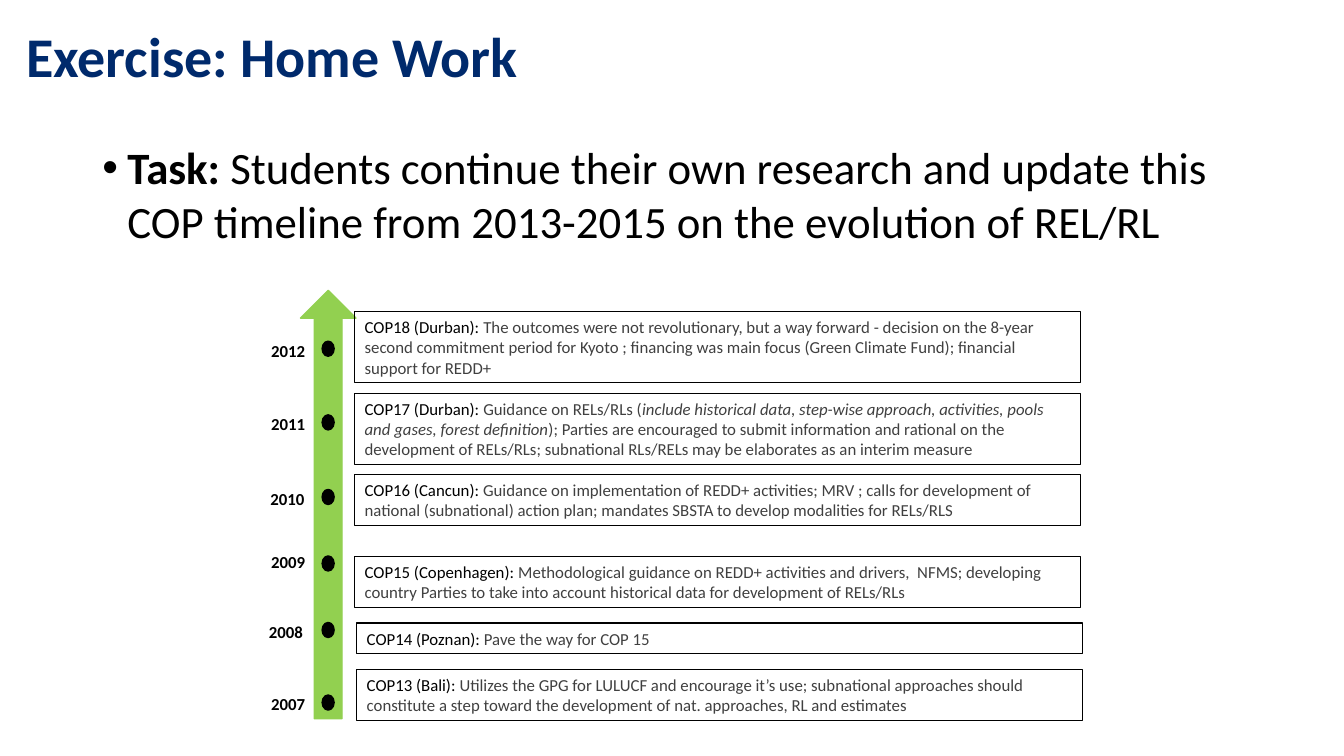
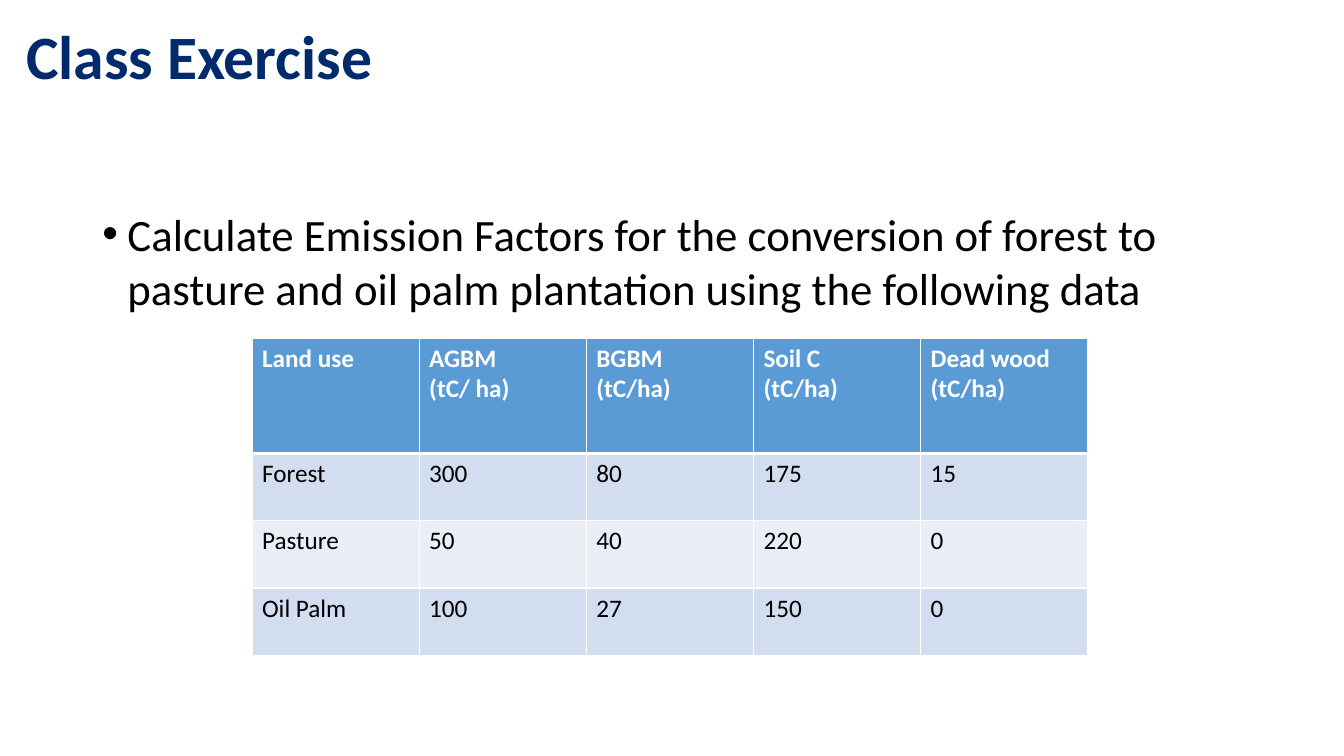
from pptx import Presentation
from pptx.dml.color import RGBColor
from pptx.enum.shapes import MSO_SHAPE as SHAPE
from pptx.enum.text import MSO_ANCHOR as ANCHOR, PP_ALIGN as ALIGN
from pptx.oxml import parse_xml
from pptx.oxml.ns import nsdecls
from pptx.util import Pt

FONT = "Calibri"
C = {"navy": "002A6C", "black": "000000", "grey": "404040", "white": "FFFFFF",
     "green": "92D050", "blue": "5B9BD5", "band": "D2DEEF", "light": "EAEFF7"}

TASK = [("Task:", {"bold": True}),
        (" Students continue their own research and update this COP timeline "
         "from 2013-2015 on the evolution of REL/RL", {})]
CALCULATE = [("Calculate Emission Factors for the conversion of forest to pasture "
              "and oil palm plantation using the following data", {})]

GREY = {"color": "grey"}
ITALIC = {"color": "grey", "italic": True}
# year, year left, year top, dot centre, box left, box top, box height, heading, body
EVENTS = [
    ("2012", 186.5, 239.8, 249.1, 253.4, 222.5, 51, "COP18 (Durban): ", [
        ("The outcomes were not revolutionary, but a way forward - decision on the "
         "8-year second commitment period for Kyoto ; financing was main focus "
         "(Green Climate Fund); financial support for REDD+", GREY)]),
    ("2011", 186.5, 292.3, 301.7, 253.4, 280.8, 51, "COP17 (Durban): ", [
        ("Guidance on RELs/RLs (", GREY),
        ("include historical data, step-wise approach, activities, pools and gases, "
         "forest definition", ITALIC),
        ("); Parties are encouraged to submit information and rational on the "
         "development of RELs/RLs; subnational RLs/RELs may be elaborates as an "
         "interim measure", GREY)]),
    ("2010", 186, 345.6, 355, 253.4, 339.1, 36.3, "COP16 (Cancun): ", [
        ("Guidance on implementation of REDD+ activities; MRV ; calls for development "
         "of national (subnational) action plan; mandates SBSTA to develop modalities "
         "for RELs/RLS", GREY)]),
    ("2009", 186.5, 390.2, 402.5, 253.4, 397.4, 36.3, "COP15 (Copenhagen): ", [
        ("Methodological guidance on REDD+ activities and drivers,  NFMS; developing "
         "country Parties to take into account historical data for development of "
         "RELs/RLs", GREY)]),
    ("2008", 185, 440.6, 450, 254.9, 445, 21.8, "COP14 (Poznan): ", [
        ("Pave the way for COP 15", GREY)]),
    ("2007", 186.5, 491.8, 501.8, 254.9, 478.1, 36.3, "COP13 (Bali): ", [
        ("Utilizes the GPG for LULUCF and encourage it’s use; subnational approaches "
         "should constitute a step toward the development of nat. approaches, RL and "
         "estimates", GREY)]),
]
AXIS_X = 234.4
ARROW_W, ARROW_TOP, ARROW_H = 39.6, 207.4, 306
DOT_W, DOT_H = 8.6, 10.8
BOX_W = 518.4

TABLE = [
    ["Land use", "AGBM\n(tC/ ha)", "BGBM\n(tC/ha)", "Soil C\n(tC/ha)", "Dead wood (tC/ha)"],
    ["Forest", "300", "80", "175", "15"],
    ["Pasture", "50", "40", "220", "0"],
    ["Oil Palm", "100", "27", "150", "0"],
]
COL_W, HEAD_H, ROW_H = 119.4, 82.4, 48.1


def rgb(name):
    return RGBColor.from_string(C[name])


def write(p, text, size=12, color="black", bold=False, italic=False):
    r = p.add_run()
    r.text = text
    f = r.font
    f.name, f.size, f.bold, f.italic = FONT, Pt(size), bold, italic
    f.color.rgb = rgb(color)


def add_text(s, x, y, w, h, wrap=True):
    tf = s.shapes.add_textbox(Pt(x), Pt(y), Pt(w), Pt(h)).text_frame
    tf.word_wrap = wrap
    return tf


def add_shape(s, kind, x, y, w, h, line, fill=None, weight=1):
    sp = s.shapes.add_shape(kind, Pt(x), Pt(y), Pt(w), Pt(h))
    sp.shadow.inherit = False
    if fill:
        sp.fill.solid()
        sp.fill.fore_color.rgb = rgb(fill)
    else:
        sp.fill.background()
    sp.line.color.rgb = rgb(line)
    sp.line.width = Pt(weight)
    return sp


def new_slide(prs, title, size, body, body_top, body_w):
    s = prs.slides.add_slide(prs.slide_layouts[6])
    p = add_text(s, 66, body_top, body_w, 486.7 - body_top).paragraphs[0]
    pPr = p._p.get_or_add_pPr()
    pPr.set("marL", str(Pt(18)))
    pPr.set("indent", str(-Pt(18)))
    for tag, attr in (("buFont", 'typeface="Arial"'), ("buChar", 'char="•"')):
        pPr.append(parse_xml(f'<a:{tag} {nsdecls("a")} {attr}/>'))
    p.space_after = Pt(12)
    for text, style in body:
        write(p, text, size=32, **style)
    tf = add_text(s, 11.5, 0, 935, 85)
    tf.vertical_anchor = ANCHOR.MIDDLE
    tf.paragraphs[0].line_spacing = 0.9
    write(tf.paragraphs[0], title, size=size, color="navy", bold=True)
    return s


def add_timeline(s):
    add_shape(s, SHAPE.UP_ARROW, AXIS_X - ARROW_W / 2, ARROW_TOP, ARROW_W, ARROW_H,
              "green", "green")
    for year, year_x, year_y, dot_y, box_x, box_y, box_h, heading, body in EVENTS:
        add_shape(s, SHAPE.OVAL, AXIS_X - DOT_W / 2, dot_y - DOT_H / 2, DOT_W, DOT_H,
                  "black", "black")
        tf = add_text(s, year_x, year_y, 39.6, 21.8, wrap=False)
        write(tf.paragraphs[0], year, bold=True)
        sp = add_shape(s, SHAPE.RECTANGLE, box_x, box_y, BOX_W, box_h, "black", weight=0.75)
        tf = sp.text_frame
        tf.word_wrap = True
        tf.vertical_anchor = ANCHOR.MIDDLE
        p = tf.paragraphs[0]
        p.alignment = ALIGN.LEFT
        write(p, heading)
        for text, style in body:
            write(p, text, **style)


def set_borders(cell, **weights):
    tcPr = cell._tc.get_or_add_tcPr()
    for i, side in enumerate(("L", "R", "T", "B")):
        tcPr.insert(i, parse_xml(
            f'<a:ln{side} {nsdecls("a")} w="{Pt(weights.get(side, 1))}"><a:solidFill>'
            f'<a:srgbClr val="{C["white"]}"/></a:solidFill></a:ln{side}>'))


def add_data_table(s):
    rows, cols = len(TABLE), len(TABLE[0])
    heights = [HEAD_H] + [ROW_H] * (rows - 1)
    tbl = s.shapes.add_table(rows, cols, Pt(180), Pt(241.5),
                             Pt(COL_W * cols), Pt(sum(heights))).table
    for col in tbl.columns:
        col.width = Pt(COL_W)
    for i, values in enumerate(TABLE):
        tbl.rows[i].height = Pt(heights[i])
        head = i == 0
        fill = "blue" if head else "band" if i % 2 else "light"
        for j, value in enumerate(values):
            cell = tbl.cell(i, j)
            cell.fill.solid()
            cell.fill.fore_color.rgb = rgb(fill)
            set_borders(cell, B=3 if head else 1, T=3 if i == 1 else 1)
            tf = cell.text_frame
            for k, line in enumerate(value.split("\n")):
                p = tf.add_paragraph() if k else tf.paragraphs[0]
                write(p, line, size=18, color="white" if head else "black", bold=head)


def main():
    prs = Presentation()
    prs.slide_width, prs.slide_height = Pt(960), Pt(540)
    add_timeline(new_slide(prs, "Exercise: Home Work", 40, TASK, 96.5, 856))
    add_data_table(new_slide(prs, "Class Exercise", 44, CALCULATE, 144, 828))
    prs.save("out.pptx")


if __name__ == "__main__":
    main()
